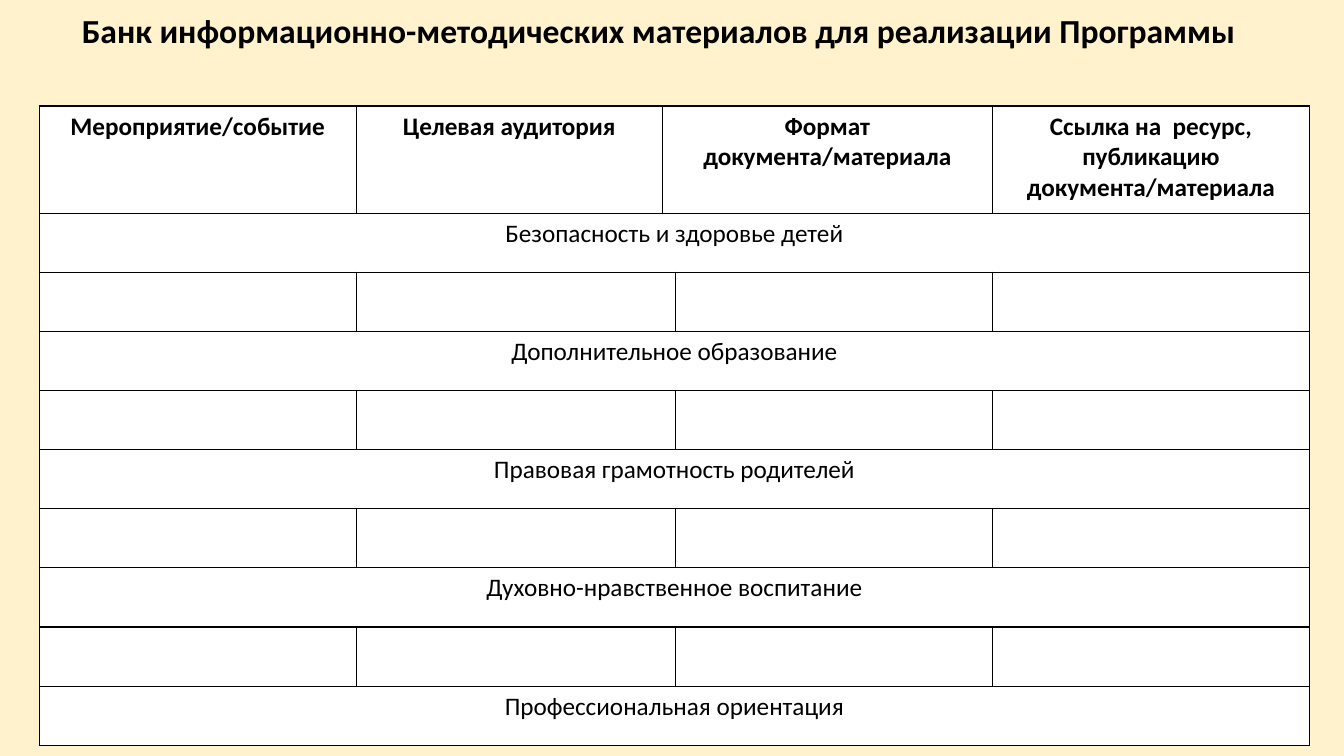
"""Slide with a bank of teaching materials set out as a table."""
from lxml import etree
from pptx import Presentation
from pptx.dml.color import RGBColor
from pptx.enum.text import MSO_ANCHOR, PP_ALIGN
from pptx.oxml.ns import qn
from pptx.util import Cm, Pt

CENTER = PP_ALIGN.CENTER
MIDDLE = MSO_ANCHOR.MIDDLE
FONT = "Calibri"
INK, PAPER, CREAM = "000000", "FFFFFF", "FFF2CC"
TITLE = "Банк информационно-методических материалов для реализации Программы"
HEADS = {
    0: "Мероприятие/событие",
    1: "Целевая аудитория",
    2: "Формат документа/материала",
    4: "Ссылка на  ресурс, публикацию документа/материала",
}
THEMES = [
    "Безопасность и здоровье детей",
    "Дополнительное образование",
    "Правовая грамотность родителей",
    "Духовно-нравственное воспитание",
    "Профессиональная ориентация",
]
COLS = [7.99, 7.71, 0.33, 7.99, 7.99]
HEAD_H, ROW_H = 2.7, 1.49


def paint(fill, color):
    """Give a fill one solid colour."""
    fill.solid()
    fill.fore_color.rgb = RGBColor.from_string(color)


def write(frame, text, size, bold=False):
    """Write one centred run into a text frame."""
    para = frame.paragraphs[0]
    para.alignment = CENTER
    run = para.add_run()
    run.text = text
    font = run.font
    font.name, font.size, font.bold = FONT, Pt(size), bold
    paint(font.fill, INK)


def add_title(slide, text):
    """Add the heading above the table."""
    box = slide.shapes.add_textbox(Cm(1), Cm(0.2), Cm(31.2), Cm(1.1))
    frame = box.text_frame
    frame.word_wrap = True
    frame.vertical_anchor = MIDDLE
    write(frame, text, 24, True)


def rule_cell(cell):
    """Draw a thin line on each side of a cell."""
    props = cell._tc.get_or_add_tcPr()
    for spot, side in enumerate(("a:lnL", "a:lnR", "a:lnT", "a:lnB")):
        line = etree.Element(qn(side), w=str(Pt(1)))
        fill = etree.SubElement(line, qn("a:solidFill"))
        etree.SubElement(fill, qn("a:srgbClr"), val=INK)
        props.insert(spot, line)


def add_grid(slide):
    """Add the empty ruled table."""
    count = 2 * len(THEMES)
    high = HEAD_H + ROW_H * (count - 1)
    frame = slide.shapes.add_table(
        count, len(COLS), Cm(0.99), Cm(2.67), Cm(sum(COLS)), Cm(high))
    table = frame.table
    table.first_row = table.horz_banding = False
    for col, width in zip(table.columns, COLS):
        col.width = Cm(width)
    for index, row in enumerate(table.rows):
        row.height = Cm(ROW_H if index else HEAD_H)
    for cell in table.iter_cells():
        rule_cell(cell)
        paint(cell.fill, PAPER)
    return table


def fill_grid(table):
    """Merge the cells and write the heads and themes."""
    last = len(COLS) - 1
    for col, text in HEADS.items():
        write(table.cell(0, col).text_frame, text, 18, True)
    table.cell(0, 2).merge(table.cell(0, 3))
    for index, theme in enumerate(THEMES):
        row = 2 * index + 1
        table.cell(row, 0).merge(table.cell(row, last))
        write(table.cell(row, 0).text_frame, theme, 18)
        if index:
            table.cell(row - 1, 1).merge(table.cell(row - 1, 2))


def main():
    """Build and save the slide."""
    deck = Presentation()
    deck.slide_width, deck.slide_height = Cm(33.87), Cm(19.05)
    slide = deck.slides.add_slide(deck.slide_layouts[6])
    paint(slide.background.fill, CREAM)
    add_title(slide, TITLE)
    fill_grid(add_grid(slide))
    deck.save("out.pptx")


if __name__ == "__main__":
    main()
